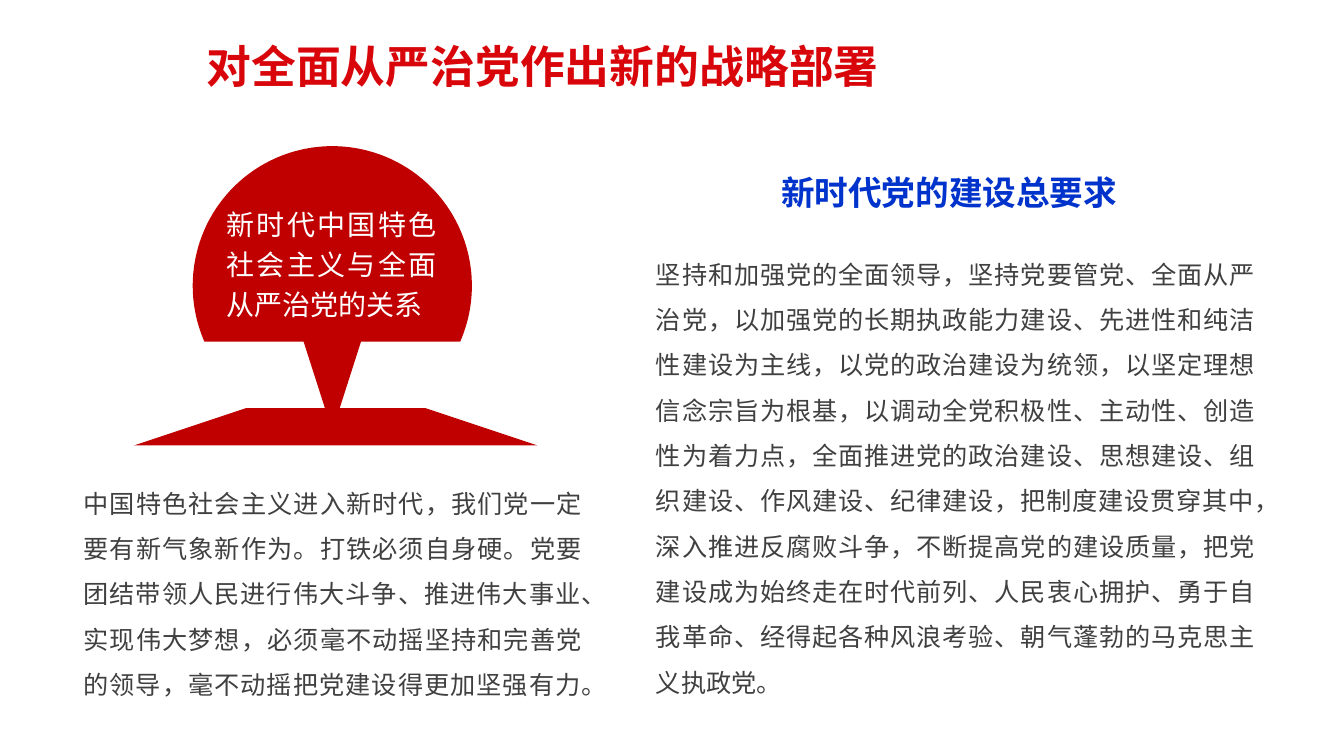
from math import asin, cos, pi, sin

from lxml.etree import SubElement
from pptx import Presentation
from pptx.dml.color import RGBColor
from pptx.enum.shapes import MSO_SHAPE
from pptx.enum.text import MSO_AUTO_SIZE, PP_ALIGN
from pptx.oxml.ns import qn
from pptx.util import Pt

FONT = "Noto Sans CJK SC"
DARK_RED = "C00000"
BODY_GREY = "404040"

TITLE = "对全面从严治党作出新的战略部署"
RELATION = "新时代中国特色社会主义与全面从严治党的关系"
MISSION = (
    "中国特色社会主义进入新时代，我们党一定要有新气象新作为。打铁必须自身硬。"
    "党要团结带领人民进行伟大斗争、推进伟大事业、实现伟大梦想，"
    "必须毫不动摇坚持和完善党的领导，毫不动摇把党建设得更加坚强有力。"
)
REQUIREMENT_HEADING = "新时代党的建设总要求"
REQUIREMENT = (
    "坚持和加强党的全面领导，坚持党要管党、全面从严治党，"
    "以加强党的长期执政能力建设、先进性和纯洁性建设为主线，"
    "以党的政治建设为统领，以坚定理想信念宗旨为根基，"
    "以调动全党积极性、主动性、创造性为着力点，"
    "全面推进党的政治建设、思想建设、组织建设、作风建设、纪律建设，"
    "把制度建设贯穿其中，深入推进反腐败斗争，不断提高党的建设质量，"
    "把党建设成为始终走在时代前列、人民衷心拥护、勇于自我革命、"
    "经得起各种风浪考验、朝气蓬勃的马克思主义执政党。"
)


def colour(value):
    return RGBColor.from_string(value)


def apply(target, formats):
    for attribute, value in formats.items():
        setattr(target, attribute, value)


def add_text(slide, box, wording, size, shade, bold=False, spacing=None):
    frame = slide.shapes.add_textbox(*map(Pt, box)).text_frame
    apply(frame, {"word_wrap": True, "auto_size": MSO_AUTO_SIZE.SHAPE_TO_FIT_TEXT})
    paragraph = frame.paragraphs[0]
    if spacing:
        apply(paragraph, {"alignment": PP_ALIGN.JUSTIFY, "line_spacing": spacing})
    run = paragraph.add_run()
    run.text = wording
    apply(run.font, {"name": FONT, "size": Pt(size), "bold": bold})
    run.font.color.rgb = colour(shade)
    SubElement(run.font._element, qn("a:ea"), typeface=FONT)


def paint(part, shade):
    part.shadow.inherit = False
    part.fill.solid()
    part.fill.fore_color.rgb = colour(shade)
    part.line.fill.background()


def add_pin(slide, centre_x, centre_y, radius, cut_y, tip_y, neck_half, steps=120):
    dip = asin((cut_y - centre_y) / radius)
    sweep = pi + 2 * dip
    angles = [pi - dip + sweep * step / steps for step in range(steps + 1)]
    outline = [(centre_x + radius * cos(a), centre_y + radius * sin(a)) for a in angles]
    outline += [
        (centre_x + neck_half, cut_y),
        (centre_x, tip_y),
        (centre_x - neck_half, cut_y),
    ]
    start, *rest = [(Pt(x), Pt(y)) for x, y in outline]
    builder = slide.shapes.build_freeform(*start)
    builder.add_line_segments(rest, close=True)
    paint(builder.convert_to_shape(), DARK_RED)


def add_base(slide, box, slant):
    base = slide.shapes.add_shape(MSO_SHAPE.TRAPEZOID, *map(Pt, box))
    base.adjustments[0] = slant
    paint(base, DARK_RED)


def main():
    deck = Presentation()
    apply(deck, {"slide_width": Pt(960), "slide_height": Pt(540)})
    slide = deck.slides.add_slide(deck.slide_layouts[6])

    add_text(slide, (140.4, 23.8, 608.4, 46), TITLE, 32, "D8060A", bold=True)
    add_pin(slide, 237.4, 204.1, 99.7, 244, 308, 20.5)
    add_base(slide, (95.8, 291.6, 288, 26.6), 3)
    add_text(slide, (154.8, 139.7, 164.2, 94.3), RELATION, 20, "FFFFFF", spacing=1.2)
    add_text(slide, (52.6, 334.1, 370.1, 171.4), MISSION, 18, BODY_GREY, spacing=1.5)
    add_text(slide, (550.8, 113.8, 262.8, 42.5), REQUIREMENT_HEADING, 24, "0033CC",
             bold=True, spacing=1.2)
    add_text(slide, (461.5, 170.6, 442.1, 334.8), REQUIREMENT, 18, BODY_GREY, spacing=1.5)

    deck.save("out.pptx")


if __name__ == "__main__":
    main()
